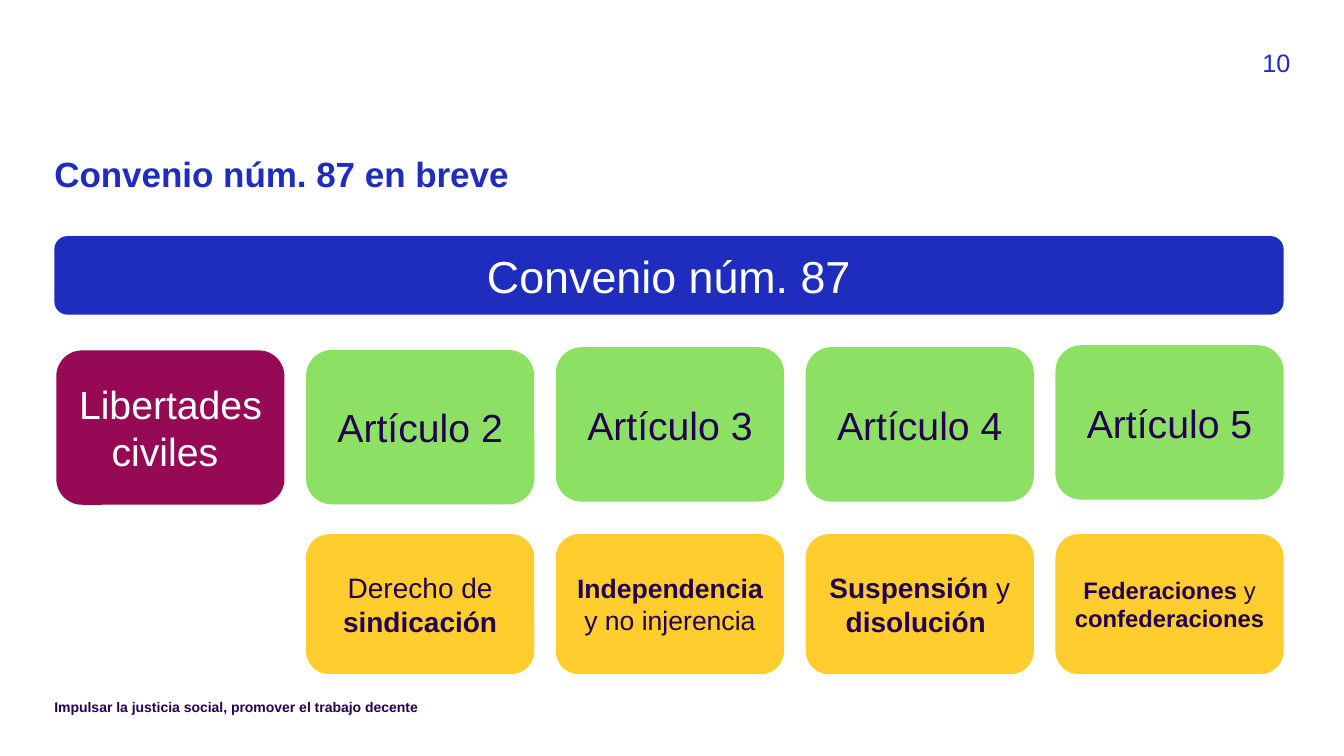
from pptx import Presentation
from pptx.dml.color import RGBColor
from pptx.enum.shapes import MSO_SHAPE
from pptx.enum.text import MSO_ANCHOR, PP_ALIGN
from pptx.util import Cm, Pt

BLUE, PLUM, GREEN, GOLD = "1E2DBE", "960A55", "8CE164", "FFCD2D"
DARK, WHITE = "230050", "FFFFFF"

# Per article: title, top of its card, text size and (text, bold) runs below
ARTICLES = [
    ("Artículo 2", 8.82, 20, [("Derecho de ", False), ("sindicación", True)]),
    ("Artículo 3", 8.75, 19,
     [("Independencia", True), (" y no injerencia", False)]),
    ("Artículo 4", 8.75, 20,
     [("Suspensión", True), (" y ", False), ("disolución ", True)]),
    ("Artículo 5", 8.7, 17,
     [("Federaciones", True), (" y ", False), ("confederaciones ", True)]),
]


def paint(hue):
    return RGBColor.from_string(hue)


def write(frame, runs, size, hue, align):
    """Fill the first paragraph with (text, bold) runs."""
    frame.word_wrap = True
    para = frame.paragraphs[0]
    para.alignment = align
    for text, bold in runs:
        run = para.add_run()
        run.text = text
        font = run.font
        font.name, font.size, font.bold = "Arial", Pt(size), bold
        font.color.rgb = paint(hue)
    return para


def label(slide, box, text, size, hue, bold=False, align=PP_ALIGN.LEFT):
    frame = slide.shapes.add_textbox(*map(Cm, box)).text_frame
    frame.margin_left = frame.margin_right = 0
    frame.margin_top = frame.margin_bottom = 0
    return write(frame, [(text, bold)], size, hue, align)


def card(slide, box, runs, size, fill, hue):
    """Draw a rounded box with centred text."""
    shape = slide.shapes.add_shape(MSO_SHAPE.ROUNDED_RECTANGLE, *map(Cm, box))
    shape.shadow.inherit = False
    shape.fill.solid()
    shape.fill.fore_color.rgb = paint(fill)
    shape.line.fill.background()
    shape.text_frame.vertical_anchor = MSO_ANCHOR.MIDDLE
    write(shape.text_frame, runs, size, hue, PP_ALIGN.CENTER)


def frame_page(slide, wide):
    """Place the footer, page number and title."""
    left = 1.37
    label(slide, (left, 17.6, 15.57, 0.5),
          "Impulsar la justicia social, promover el trabajo decente",
          10, DARK, True)
    label(slide, (wide - 2.85, 1.19, 1.5, 0.8), "10", 18, BLUE,
          align=PP_ALIGN.RIGHT)
    title = label(slide, (left, 3.96, 28.73, 2),
                  "Convenio núm. 87 en breve", 25, BLUE, True)
    title.line_spacing = 0.9


def chart_rights(slide, left, top, wide):
    """Draw the banner and the five columns under it."""
    card(slide, (left, top, wide, 1.98), [("Convenio núm. 87", False)],
         32, BLUE, WHITE)
    width, tall, low = 5.75, 3.89, 3.53
    first = left + 0.05
    step = (wide - 0.05 - width) / len(ARTICLES)
    card(slide, (first, top + 2.88, width, tall),
         [("Libertades civiles ", False)], 28, PLUM, WHITE)
    for col, (name, high, size, runs) in enumerate(ARTICLES, 1):
        x = first + col * step
        card(slide, (x, high, width, tall), [(name, False)], 28, GREEN, DARK)
        card(slide, (x, top + 7.51, width, low), runs, size, GOLD, DARK)


def main():
    deck = Presentation()
    wide = 33.87
    deck.slide_width, deck.slide_height = Cm(wide), Cm(19.05)
    slide = deck.slides.add_slide(deck.slide_layouts[6])
    frame_page(slide, wide)
    chart_rights(slide, 1.37, 5.95, 30.98)
    deck.save("out.pptx")


if __name__ == "__main__":
    main()
